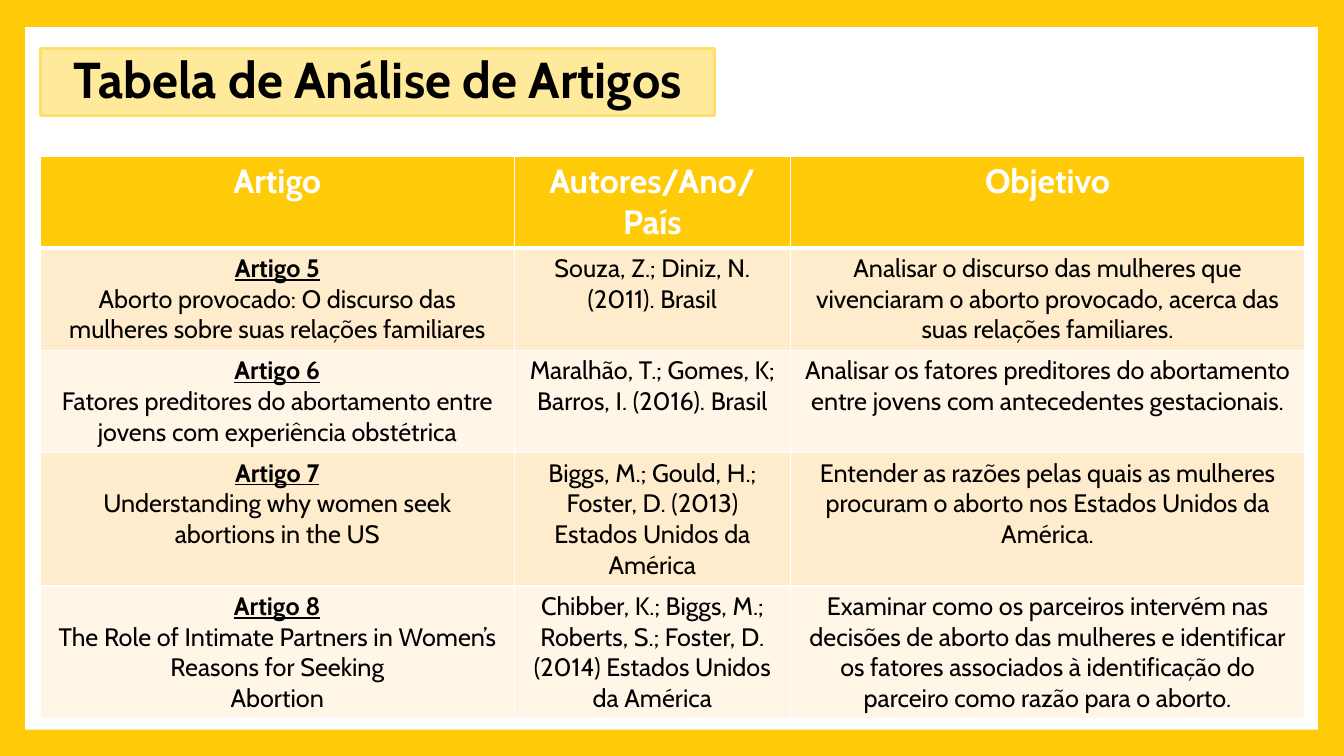
from lxml import etree
from pptx import Presentation
from pptx import util as u
from pptx.dml.color import RGBColor
from pptx.enum import shapes, text
from pptx.oxml.ns import qn

HUES = {"gold": "FFCA08", "white": "FFFFFF", "black": "000000", "odd": "FFECCC",
        "even": "FFF6E7", "label": "FFEA9C", "edge": "FFDF6B"}
FONT = "Cabin"
WIDE, HIGH = 13.33, 7.5
LEFT = 0.4
COLS = [4.7, 2.74, 5.1]
ROW = 0.41
HEADS = ["Artigo", "Autores/Ano/País", "Objetivo"]
STUDIES = [
    (["Artigo 5", "Aborto provocado: O discurso das mulheres sobre suas relações familiares"],
     "Souza, Z.; Diniz, N. (2011). Brasil",
     "Analisar o discurso das mulheres que vivenciaram o aborto provocado, "
     "acerca das suas relações familiares."),
    (["Artigo 6", "Fatores preditores do abortamento entre jovens com experiência obstétrica"],
     "Maralhão, T.; Gomes, K; Barros, I. (2016). Brasil",
     "Analisar os fatores preditores do abortamento entre jovens com "
     "antecedentes gestacionais."),
    (["Artigo 7", "Understanding why women seek abortions in the US"],
     "Biggs, M.; Gould, H.; Foster, D. (2013) Estados Unidos da América",
     "Entender as razões pelas quais as mulheres procuram o aborto nos "
     "Estados Unidos da América."),
    (["Artigo 8", "The Role of Intimate Partners in Women’s Reasons for Seeking", "Abortion"],
     "Chibber, K.; Biggs, M.; Roberts, S.; Foster, D. (2014) Estados Unidos da América",
     "Examinar como os parceiros intervém nas decisões de aborto das mulheres e "
     "identificar os fatores associados à identificação do parceiro como razão "
     "para o aborto."),
]


def hue(name):
    return RGBColor.from_string(HUES[name])


def paint(part, name):
    part.fill.solid()
    part.fill.fore_color.rgb = hue(name)


def write(para, words, size=18, color="black", bold=False, under=False, gap=None):
    para.alignment = text.PP_ALIGN.CENTER
    para.line_spacing = gap
    run = para.add_run()
    run.text = words
    font = run.font
    font.name, font.size = FONT, u.Pt(size)
    font.bold, font.underline = bold, under
    font.color.rgb = hue(color)


def rule(cell, base=1):
    """Draw white borders; base is the width of the lower one in points."""
    props = cell._tc.get_or_add_tcPr()
    for spot, (side, width) in enumerate([("L", 1), ("R", 1), ("T", 1), ("B", base)]):
        line = etree.Element(qn(f"a:ln{side}"), w=str(u.Pt(width)))
        fill = etree.SubElement(line, qn("a:solidFill"))
        etree.SubElement(fill, qn("a:srgbClr"), val=HUES["white"])
        props.insert(spot, line)


def frame(slide, box):
    paint(slide.background, "gold")
    panel = slide.shapes.add_shape(shapes.MSO_SHAPE.RECTANGLE, *map(u.Inches, box))
    panel.shadow.inherit = False
    paint(panel, "white")
    panel.line.fill.background()
    slide.shapes.title.element.addprevious(panel.element)


def head(slide, box):
    title = slide.shapes.title
    title.left, title.top, title.width, title.height = map(u.Inches, box)
    paint(title, "label")
    title.line.color.rgb = hue("edge")
    title.line.width = u.Pt(2.25)
    body = title.text_frame
    body.auto_size = text.MSO_AUTO_SIZE.NONE
    body.vertical_anchor = text.MSO_ANCHOR.MIDDLE
    write(body.paragraphs[0], "Tabela de Análise de Artigos", size=36, bold=True, gap=0.9)


def grid(slide, left, top):
    count = len(STUDIES) + 1
    box = map(u.Inches, (left, top, sum(COLS), ROW * count))
    table = slide.shapes.add_table(count, len(COLS), *box).table
    for col, width in zip(table.columns, COLS):
        col.width = u.Inches(width)
    for cell, words in zip(table.rows[0].cells, HEADS):
        paint(cell, "gold")
        rule(cell, base=3)
        write(cell.text_frame.paragraphs[0], words, size=24, color="white", bold=True)
    for i, (name, *facts) in enumerate(STUDIES, 1):
        for cell, lines in zip(table.rows[i].cells, [name] + [[f] for f in facts]):
            paint(cell, "odd" if i % 2 else "even")
            rule(cell)
            body = cell.text_frame
            for j, words in enumerate(lines):
                para = body.add_paragraph() if j else body.paragraphs[0]
                mark = lines is name and j == 0
                write(para, words, bold=mark, under=mark)


def main():
    deck = Presentation()
    deck.slide_width, deck.slide_height = u.Inches(WIDE), u.Inches(HIGH)
    slide = deck.slides.add_slide(deck.slide_layouts[5])
    frame(slide, (0.25, 0.27, 12.82, 6.97))
    head(slide, (LEFT, 0.48, 6.69, 0.67))
    grid(slide, LEFT, 1.55)
    deck.save("out.pptx")


if __name__ == "__main__":
    main()
